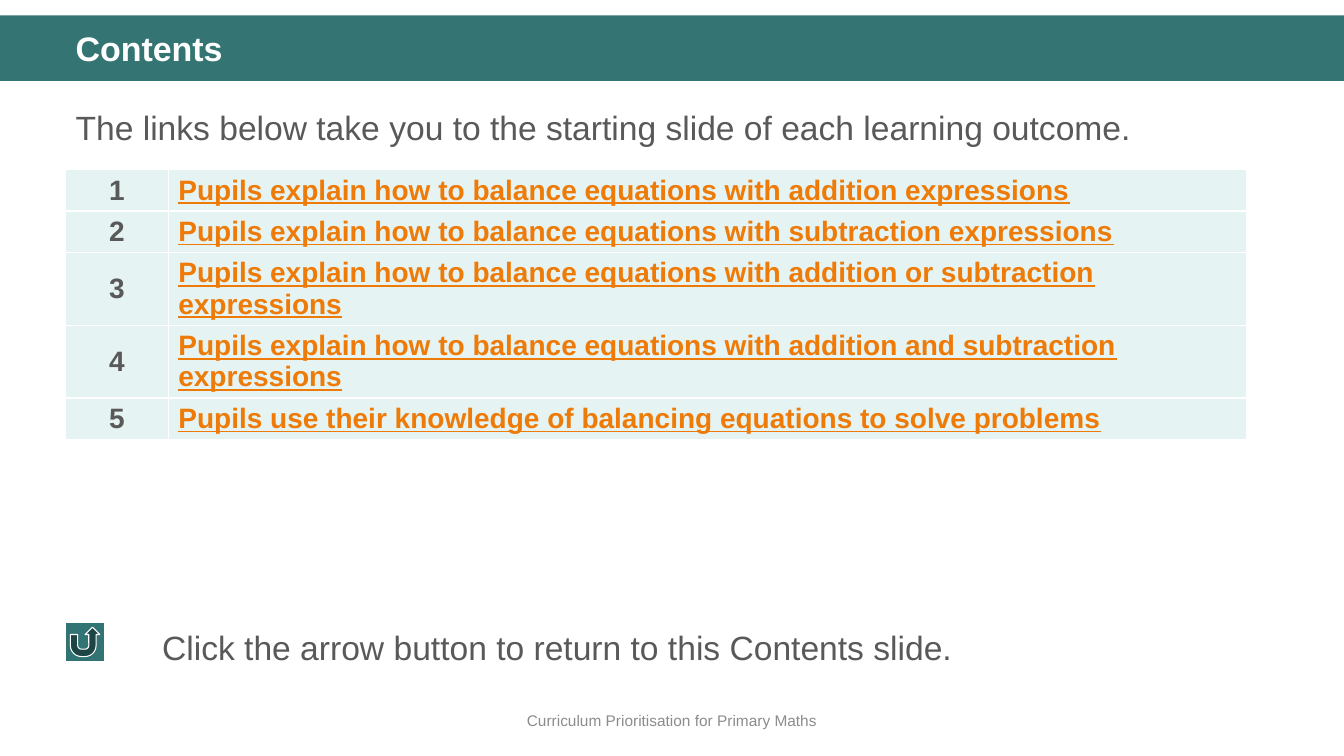
from lxml.etree import SubElement
from pptx import Presentation
from pptx.dml.color import RGBColor
from pptx.enum.shapes import MSO_SHAPE
from pptx.enum.text import MSO_ANCHOR, MSO_AUTO_SIZE, PP_ALIGN
from pptx.oxml.ns import qn
from pptx.util import Pt

TITLE = "Contents"
INTRO = "The links below take you to the starting slide of each learning outcome."
GOALS = [
    "Pupils explain how to balance equations with addition expressions",
    "Pupils explain how to balance equations with subtraction expressions",
    "Pupils explain how to balance equations with addition or subtraction expressions",
    "Pupils explain how to balance equations with addition and subtraction expressions",
    "Pupils use their knowledge of balancing equations to solve problems",
]
HINT = "Click the arrow button to return to this Contents slide."
FOOTER = "Curriculum Prioritisation for Primary Maths"

COLORS = {
    "band": "347574", "button": "327473", "cell": "E5F3F2", "white": "FFFFFF",
    "text": "595959", "link": "EE7B08", "footer": "8C8C8C",
}
WIDE, HIGH = 960, 540
LEFT = 46.8
SPAN = 877
COLS = (73.4, 770)
LOW, TALL = 29.5, 52
LONG = 70  # a longer goal takes two lines


def tint(name):
    return RGBColor.from_string(COLORS[name])


def write(frame, text, size=24, color="text", bold=False, line=False,
          align=PP_ALIGN.LEFT, anchor=MSO_ANCHOR.TOP, lead=1.0):
    frame.word_wrap = True
    frame.vertical_anchor = anchor
    para = frame.paragraphs[0]
    para.alignment = align
    para.line_spacing = lead
    para.space_before = Pt(0)
    run = para.add_run()
    run.text = text
    font = run.font
    font.name, font.size = "Arial", Pt(size)
    font.bold, font.underline = bold, line
    font.color.rgb = tint(color)


def place(shape, x, y, w, h):
    shape.left, shape.top, shape.width, shape.height = Pt(x), Pt(y), Pt(w), Pt(h)


def block(shapes, kind, box, fill):
    shape = shapes.add_shape(kind, *map(Pt, box))
    shape.shadow.inherit = False
    shape.fill.solid()
    shape.fill.fore_color.rgb = tint(fill)
    return shape


def label(shapes, box, text, **style):
    frame = shapes.add_textbox(*map(Pt, box)).text_frame
    write(frame, text, **style)


def grid(shapes):
    rows = [TALL if len(goal) > LONG else LOW for goal in GOALS]
    box = (LEFT, 121.2, sum(COLS), sum(rows))
    table = shapes.add_table(len(GOALS), len(COLS), *map(Pt, box)).table
    table.horz_banding = False
    for col, width in zip(table.columns, COLS):
        col.width = Pt(width)
    for num, (goal, height) in enumerate(zip(GOALS, rows)):
        table.rows[num].height = Pt(height)
        pair = (
            (str(num + 1), {"align": PP_ALIGN.CENTER}),
            (goal, {"color": "link", "line": True}),
        )
        for col, (text, style) in enumerate(pair):
            cell = table.cell(num, col)
            cell.fill.solid()
            cell.fill.fore_color.rgb = tint("cell")
            write(cell.text_frame, text, size=20, bold=True, **style)
            cell.vertical_anchor = MSO_ANCHOR.MIDDLE


def main():
    deck = Presentation()
    deck.slide_width, deck.slide_height = Pt(WIDE), Pt(HIGH)
    slide = deck.slides.add_slide(deck.slide_layouts[1])
    shapes = slide.shapes

    band = block(shapes, MSO_SHAPE.RECTANGLE, (0, 11, WIDE, 46.8), "band")
    band.line.fill.background()
    shapes.title.element.addprevious(band.element)

    title, body = shapes.title, slide.placeholders[1]
    place(title, LEFT, 19.4, SPAN, 33.8)
    title.text_frame.auto_size = MSO_AUTO_SIZE.NONE
    write(title.text_frame, TITLE, size=24.3, color="white", bold=True, lead=0.9)

    place(body, LEFT, 67, SPAN, 252.7)
    body.text_frame.auto_size = MSO_AUTO_SIZE.NONE
    props = body.text_frame.paragraphs[0]._p.get_or_add_pPr()
    props.set("marL", "0")
    props.set("indent", "0")
    SubElement(props, qn("a:buNone"))
    write(body.text_frame, INTRO, lead=1.2)

    grid(shapes)
    button = block(shapes, MSO_SHAPE.ACTION_BUTTON_RETURN,
                   (LEFT, 444.5, 28, 28), "button")
    button.line.color.rgb = tint("white")
    button.line.width = Pt(0.75)
    label(shapes, (108.7, 444.5, 815, 36.4), HINT)
    label(shapes, (0, 500.4, WIDE, 28.8), FOOTER, size=11, color="footer",
          align=PP_ALIGN.CENTER, anchor=MSO_ANCHOR.MIDDLE)
    deck.save("out.pptx")


if __name__ == "__main__":
    main()
